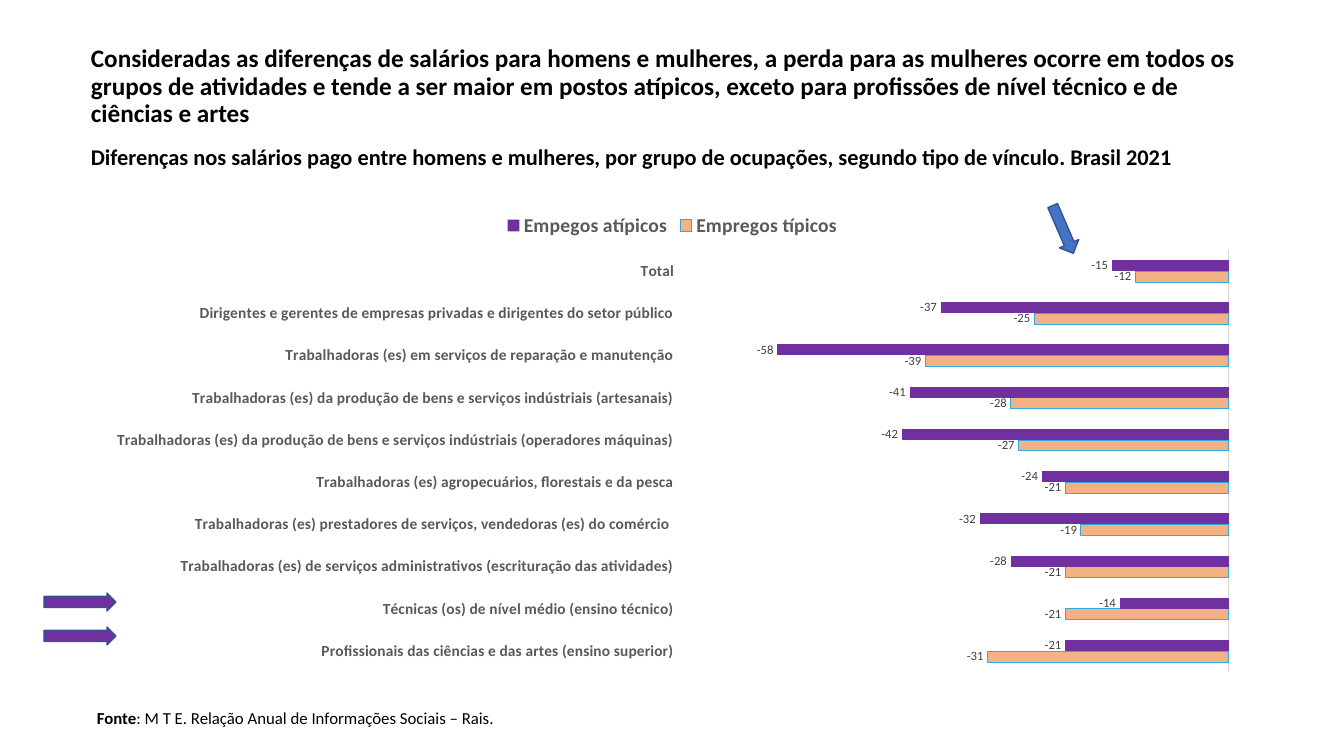
from lxml.etree import SubElement
from pptx import Presentation
from pptx.chart.data import CategoryChartData
from pptx.dml.color import RGBColor
from pptx.enum.chart import XL_CHART_TYPE, XL_LABEL_POSITION, XL_LEGEND_POSITION, XL_TICK_LABEL_POSITION, XL_TICK_MARK
from pptx.enum.shapes import MSO_SHAPE
from pptx.enum.text import MSO_ANCHOR
from pptx.oxml.ns import qn
from pptx.util import Pt

EMU_PER_PX = 914400 / 100.8
BLACK = RGBColor(0x00, 0x00, 0x00)
GRAY = RGBColor(0x59, 0x59, 0x59)
LABEL_GRAY = RGBColor(0x40, 0x40, 0x40)
AXIS_GRAY = RGBColor(0xD9, 0xD9, 0xD9)
PURPLE = RGBColor(0x70, 0x30, 0xA0)
PEACH = RGBColor(0xF4, 0xB1, 0x83)
SKY = RGBColor(0x2C, 0xAB, 0xE4)
BLUE = RGBColor(0x44, 0x72, 0xC4)
NAVY = RGBColor(0x32, 0x54, 0x91)

OCCUPATIONS = [
    ("Profissionais das ciências e das artes (ensino superior)", -31, -21),
    ("Técnicas (os) de nível médio (ensino técnico)", -21, -14),
    ("Trabalhadoras (es) de serviços administrativos (escrituração das atividades)", -21, -28),
    ("Trabalhadoras (es) prestadores de serviços, vendedoras (es) do comércio ", -19, -32),
    ("Trabalhadoras (es) agropecuários, florestais e da pesca", -21, -24),
    ("Trabalhadoras (es) da produção de bens e serviços indústriais (operadores máquinas)", -27, -42),
    ("Trabalhadoras (es) da produção de bens e serviços indústriais (artesanais)", -28, -41),
    ("Trabalhadoras (es) em serviços de reparação e manutenção", -39, -58),
    ("Dirigentes e gerentes de empresas privadas e dirigentes do setor público", -25, -37),
    ("Total", -12, -15),
]
SERIES_STYLES = [("Empregos típicos", PEACH, SKY), ("Empegos atípicos", PURPLE, None)]
PLOT_AREA = {"layoutTarget": "inner", "xMode": "edge", "yMode": "edge",
             "x": 0.51, "y": 0.1, "w": 0.47, "h": 0.88}


def px(*lengths):
    return [round(length * EMU_PER_PX) for length in lengths]


def assign(target, values):
    for name, value in values.items():
        setattr(target, name, value)


class SlideBuilder:
    font_name = "Calibri"

    def __init__(self, presentation):
        self.slide = presentation.slides.add_slide(presentation.slide_layouts[6])

    def style_font(self, font, size, color, bold=False):
        assign(font, {"name": self.font_name, "size": Pt(size), "bold": bold})
        font.color.rgb = color

    def add_text(self, box, runs, size, anchor=MSO_ANCHOR.TOP, **spacing):
        frame = self.slide.shapes.add_textbox(*px(*box)).text_frame
        assign(frame, {"word_wrap": True, "vertical_anchor": anchor})
        paragraph = frame.paragraphs[0]
        assign(paragraph, spacing)
        for text, bold in runs:
            run = paragraph.add_run()
            run.text = text
            self.style_font(run.font, size, BLACK, bold)

    def add_arrow(self, box, color, rotation=0):
        shape = self.slide.shapes.add_shape(MSO_SHAPE.RIGHT_ARROW, *px(*box))
        shape.rotation = rotation
        shape.shadow.inherit = False
        shape.fill.solid()
        shape.fill.fore_color.rgb = color
        shape.line.color.rgb = NAVY
        shape.line.width = Pt(1)
        return shape

    def add_bar_chart(self, box):
        names, *columns = zip(*OCCUPATIONS)
        data = CategoryChartData(number_format="0")
        data.categories = names
        for (name, _, _), values in zip(SERIES_STYLES, columns):
            data.add_series(name, values)
        chart = self.slide.shapes.add_chart(XL_CHART_TYPE.BAR_CLUSTERED, *px(*box), data).chart
        assign(chart, {"has_title": False, "has_legend": True})
        self.style_font(chart.font, 10, BLACK)
        assign(chart.legend, {"position": XL_LEGEND_POSITION.TOP, "include_in_layout": False})
        self.style_font(chart.legend.font, 14, GRAY, True)
        self.style_axes(chart)
        self.style_series(chart.plots[0])
        self.place_plot(chart)

    def style_axes(self, chart):
        assign(chart.value_axis, {"visible": False, "has_major_gridlines": False,
                                  "minimum_scale": -70, "maximum_scale": 0})
        axis = chart.category_axis
        assign(axis, {"major_tick_mark": XL_TICK_MARK.NONE,
                      "tick_label_position": XL_TICK_LABEL_POSITION.LOW})
        self.style_font(axis.tick_labels.font, 11, GRAY, True)
        axis.format.line.color.rgb = AXIS_GRAY
        axis.format.line.width = Pt(0.75)

    def style_series(self, plot):
        assign(plot, {"gap_width": 182, "overlap": 0, "vary_by_categories": False})
        for series, (_, fill_color, line_color) in zip(plot.series, SERIES_STYLES):
            series.invert_if_negative = False
            series.format.fill.solid()
            series.format.fill.fore_color.rgb = fill_color
            if line_color is None:
                series.format.line.fill.background()
            else:
                series.format.line.color.rgb = line_color
                series.format.line.width = Pt(0.75)
            labels = series.data_labels
            assign(labels, {"show_value": True, "number_format": "0", "number_format_is_linked": False,
                            "position": XL_LABEL_POSITION.OUTSIDE_END})
            self.style_font(labels.font, 9, LABEL_GRAY)

    def place_plot(self, chart):
        plot_area = chart.plots[0]._element.getparent()
        layout = plot_area.find(qn("c:layout"))
        if layout is None:
            layout = SubElement(plot_area, qn("c:layout"))
            plot_area.insert(0, layout)
        manual = SubElement(layout, qn("c:manualLayout"))
        for name, value in PLOT_AREA.items():
            SubElement(manual, qn("c:" + name)).set("val", str(value))


def main():
    presentation = Presentation()
    width, height = px(1344, 756)
    assign(presentation, {"slide_width": width, "slide_height": height})
    builder = SlideBuilder(presentation)
    builder.add_text((81, 40, 1171, 94), [(
        "Consideradas as diferenças de salários para homens e mulheres, a perda para as mulheres "
        "ocorre em todos os grupos de atividades e tende a ser maior em postos atípicos, exceto "
        "para profissões de nível técnico e de ciências e artes", True)],
        18, MSO_ANCHOR.MIDDLE, line_spacing=0.9)
    builder.add_text((81, 138, 1159, 37), [(
        "Diferenças nos salários pago entre homens e mulheres, por grupo de ocupações, "
        "segundo tipo de vínculo. Brasil 2021", True)], 16)
    builder.add_text((87, 701, 672, 31), [
        ("Fonte", True), (": M T E. Relação Anual de Informações Sociais – Rais.", False)],
        12, line_spacing=1.07, space_after=Pt(8))
    builder.add_bar_chart((93, 202, 1159, 480))
    for top in (627, 593):
        builder.add_arrow((44, top, 72, 18), PURPLE).adjustments[0] = 0.62
    builder.add_arrow((1037, 219, 52, 21), BLUE, 66.6)
    presentation.save("out.pptx")


if __name__ == "__main__":
    main()
